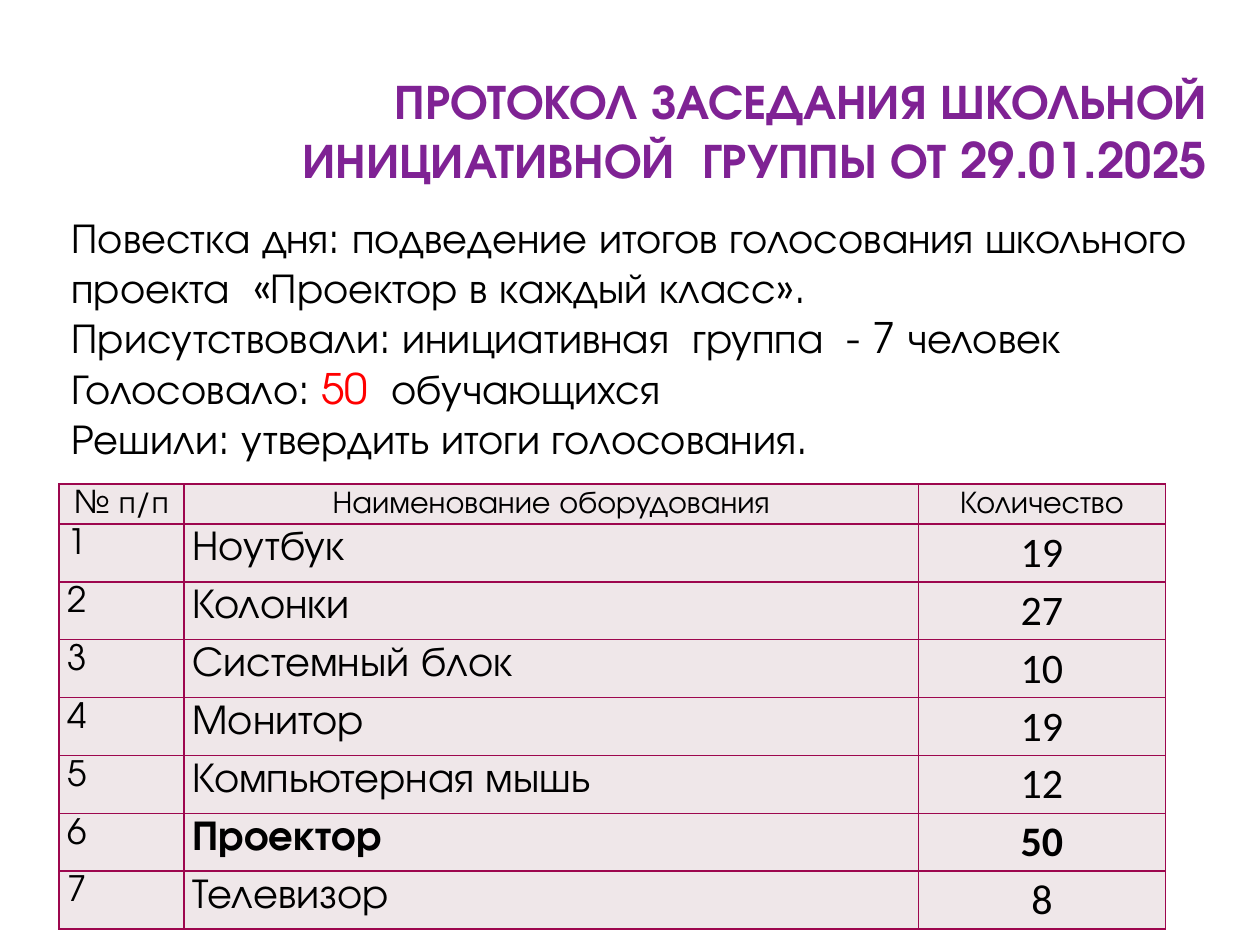
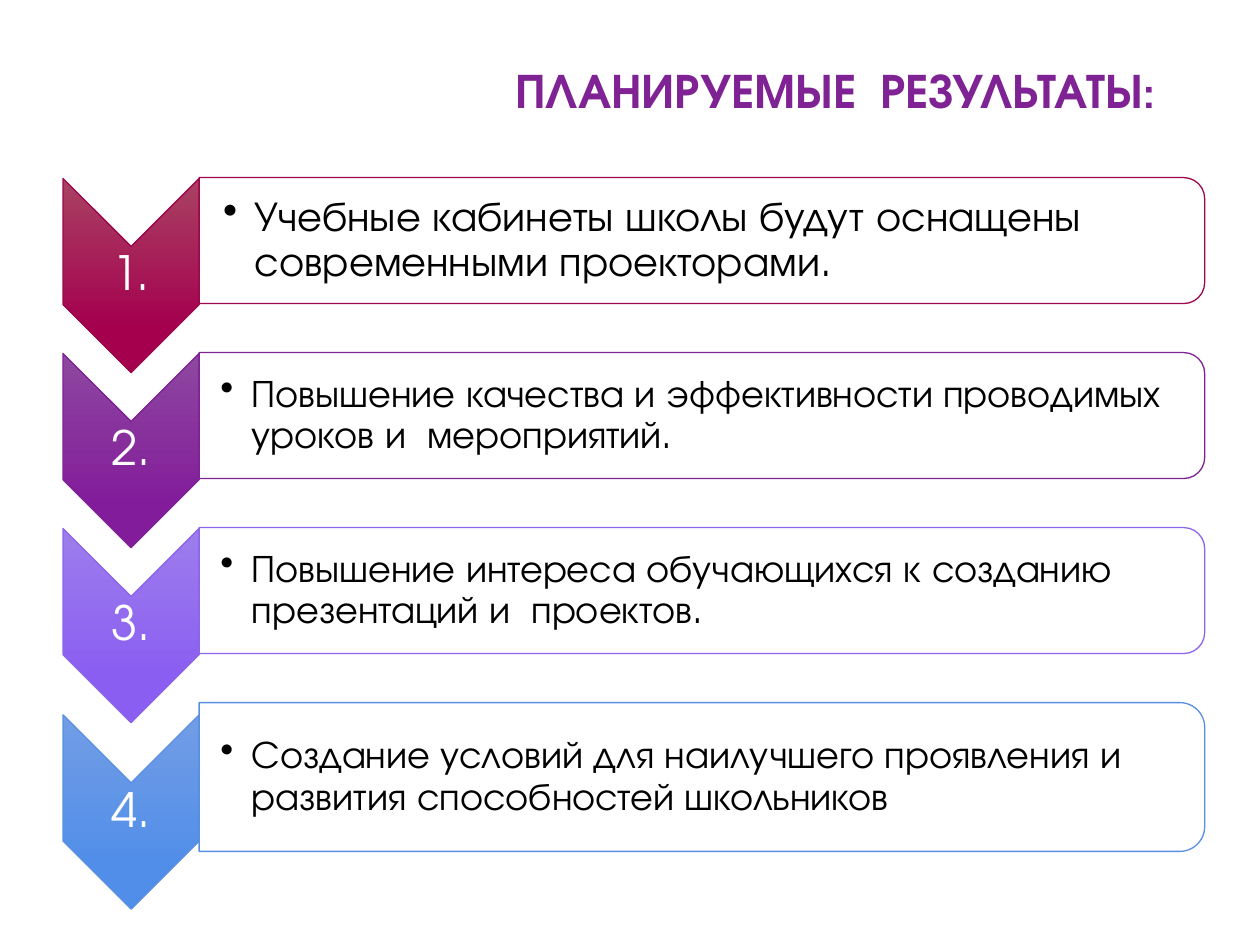
"""Build two slides: the minutes of a school vote and its planned results."""
from dataclasses import dataclass
from typing import Any

from lxml.etree import SubElement
from pptx import Presentation
from pptx.dml.color import RGBColor
from pptx.enum.shapes import MSO_SHAPE
from pptx.enum.text import MSO_ANCHOR, MSO_AUTO_SIZE, PP_ALIGN
from pptx.oxml.ns import qn
from pptx.util import Pt

FONT = "TeX Gyre Adventor"
NUMBER_FONT = "Calibri"
PURPLE, CRIMSON, BLACK, WHITE, RED = "7F2294", "9D074E", "000000", "FFFFFF", "FF0000"
CELL_FILL = "EFE7E9"


@dataclass(frozen=True)
class Span:
    text: str
    size: float = 24
    color: str = BLACK
    bold: bool = False
    font: str = FONT


@dataclass(frozen=True)
class Box:
    left: float
    top: float
    width: float
    height: float


@dataclass(frozen=True)
class Equipment:
    name: str
    votes: int
    winner: bool = False


@dataclass(frozen=True)
class Result:
    text: str
    light: str
    dark: str
    line: str
    size: float = 22
    inset: float = 12.2
    height: float = 72


AGENDA = [
    [Span("Повестка дня: подведение итогов голосования школьного проекта  «Проектор в каждый класс».")],
    [Span("Присутствовали: инициативная  группа  - 7 человек")],
    [Span("Голосовало: "), Span("50  ", color=RED), Span("обучающихся")],
    [Span("Решили: утвердить итоги голосования.")],
]
HEADERS = ["№ п/п", "Наименование оборудования", "Количество"]
COLUMN_WIDTHS = [71.3, 419.8, 141.1]
HEADER_HEIGHT, ROW_HEIGHT = 22.9, 33.1
EQUIPMENT = [
    Equipment("Ноутбук", 19),
    Equipment("Колонки", 27),
    Equipment("Системный блок", 10),
    Equipment("Монитор", 19),
    Equipment("Компьютерная мышь", 12),
    Equipment("Проектор", 50, winner=True),
    Equipment("Телевизор", 8),
]
RESULTS = [
    Result("Учебные кабинеты школы будут оснащены современными проекторами.",
           "A94263", "A4004E", CRIMSON, size=24, inset=13.7),
    Result("Повышение качества и эффективности проводимых уроков и  мероприятий.",
           "8D48A0", "831C9A", PURPLE),
    Result("Повышение интереса обучающихся к созданию презентаций и  проектов.",
           "9D7DED", "8A5EF1", "8D65EA"),
    Result("Создание условий для наилучшего проявления и развития способностей школьников",
           "729DE5", "518EE9", "588FE2", height=85),
]
RESULTS_TOP, RESULTS_GAP, CHEVRON_DROP = 101.5, 28, 20
CHEVRON_LEFT, CHEVRON_WIDTH, CHEVRON_HEIGHT = 36, 77.8, 111
PANEL_LEFT, PANEL_WIDTH = 113.8, 574.6


def rgb(color: str) -> RGBColor:
    return RGBColor.from_string(color)


def apply(target: Any, **values: Any) -> None:
    for name, value in values.items():
        setattr(target, name, value)


def place(shape: Any, box: Box) -> None:
    apply(shape, left=Pt(box.left), top=Pt(box.top), width=Pt(box.width), height=Pt(box.height))


def write(paragraph: Any, spans: list[Span], **formats: Any) -> None:
    apply(paragraph, **formats)
    for span in spans:
        run = paragraph.add_run()
        run.text = span.text
        apply(run.font, name=span.font, size=Pt(span.size), bold=span.bold)
        run.font.color.rgb = rgb(span.color)


def write_lines(shape: Any, box: Box, lines: list[list[Span]], wrap: bool = True, **formats: Any) -> None:
    place(shape, box)
    frame = shape.text_frame
    apply(frame, word_wrap=wrap, auto_size=MSO_AUTO_SIZE.NONE, vertical_anchor=MSO_ANCHOR.TOP)
    for index, spans in enumerate(lines):
        paragraph = frame.add_paragraph() if index else frame.paragraphs[0]
        write(paragraph, spans, space_before=Pt(0), **formats)


def add_title(slide: Any, box: Box, lines: list[list[tuple[str, float]]], **formats: Any) -> None:
    spans = [[Span(text, size, PURPLE, True) for text, size in line] for line in lines]
    write_lines(slide.shapes.title, box, spans, **formats)


def set_bullet(paragraph: Any, indent: float, character: str = "") -> None:
    properties = paragraph._p.get_or_add_pPr()
    properties.set("marL", str(Pt(indent)))
    properties.set("indent", str(-Pt(indent)))
    if character:
        SubElement(properties, qn("a:buChar")).set("char", character)
    else:
        SubElement(properties, qn("a:buNone"))


def draw_cell(cell: Any, span: Span, alignment: Any, spacing: float, anchor: Any = MSO_ANCHOR.TOP) -> None:
    apply(cell, margin_left=Pt(5), margin_right=Pt(5), margin_top=0, margin_bottom=0, vertical_anchor=anchor)
    for side in ("a:lnL", "a:lnR", "a:lnT", "a:lnB"):
        border = SubElement(cell._tc.get_or_add_tcPr(), qn(side))
        border.set("w", str(Pt(1)))
        SubElement(SubElement(border, qn("a:solidFill")), qn("a:srgbClr")).set("val", CRIMSON)
    cell.fill.solid()
    cell.fill.fore_color.rgb = rgb(CELL_FILL)
    write(cell.text_frame.paragraphs[0], [span], alignment=alignment, line_spacing=spacing)


def add_vote_table(slide: Any) -> None:
    frame = slide.shapes.add_table(
        len(EQUIPMENT) + 1, len(HEADERS), Pt(33.8), Pt(276.5), Pt(sum(COLUMN_WIDTHS)),
        Pt(HEADER_HEIGHT + ROW_HEIGHT * len(EQUIPMENT)))
    table = frame.table
    apply(table, first_row=False, horz_banding=False)
    for column, width in zip(table.columns, COLUMN_WIDTHS):
        column.width = Pt(width)
    for index, row in enumerate(table.rows):
        row.height = Pt(ROW_HEIGHT if index else HEADER_HEIGHT)
    for column, header in enumerate(HEADERS):
        draw_cell(table.cell(0, column), Span(header, 18), PP_ALIGN.CENTER, 1.07, MSO_ANCHOR.MIDDLE)
    for row, item in enumerate(EQUIPMENT, 1):
        draw_cell(table.cell(row, 0), Span(str(row), 20), PP_ALIGN.LEFT, 1.15)
        draw_cell(table.cell(row, 1), Span(item.name, bold=item.winner), PP_ALIGN.LEFT, 1.15)
        votes = Span(str(item.votes), bold=item.winner, font=NUMBER_FONT)
        draw_cell(table.cell(row, 2), votes, PP_ALIGN.CENTER, 1.07)


def add_turned_shape(slide: Any, kind: Any, box: Box, line: str) -> Any:
    middle_x, middle_y = box.left + box.width / 2, box.top + box.height / 2
    shape = slide.shapes.add_shape(
        kind, Pt(middle_x - box.height / 2), Pt(middle_y - box.width / 2), Pt(box.height), Pt(box.width))
    shape.rotation = 90
    shape.shadow.inherit = False
    shape.line.color.rgb = rgb(line)
    shape.line.width = Pt(0.75)
    return shape


def add_label(slide: Any, box: Box, span: Span, inset: float = 1.4, bullet: str = "") -> None:
    label = slide.shapes.add_textbox(0, 0, 0, 0)
    place(label, box)
    frame = label.text_frame
    apply(frame, word_wrap=True, vertical_anchor=MSO_ANCHOR.MIDDLE, margin_left=Pt(inset),
          margin_right=Pt(1.4), margin_top=Pt(1.4), margin_bottom=Pt(1.4))
    paragraph = frame.paragraphs[0]
    if bullet:
        set_bullet(paragraph, 18, bullet)
    write(paragraph, [span], line_spacing=0.9, alignment=PP_ALIGN.LEFT if bullet else PP_ALIGN.CENTER)


def add_result(slide: Any, number: int, top: float, result: Result) -> None:
    middle = top + result.height / 2
    chevron_middle = middle + CHEVRON_DROP
    chevron_box = Box(CHEVRON_LEFT, chevron_middle - CHEVRON_HEIGHT / 2, CHEVRON_WIDTH, CHEVRON_HEIGHT)
    chevron = add_turned_shape(slide, MSO_SHAPE.CHEVRON, chevron_box, result.line)
    chevron.fill.gradient()
    chevron.fill.gradient_angle = 270
    for stop, color, position in zip(chevron.fill.gradient_stops, (result.light, result.dark), (0, 0.78)):
        stop.color.rgb = rgb(color)
        stop.position = position
    chevron._element.spPr.find(qn("a:gradFill")).set("rotWithShape", "0")
    add_label(slide, Box(CHEVRON_LEFT, chevron_middle - 16.5, CHEVRON_WIDTH, 33), Span(f"{number}.", 27, WHITE))

    panel_box = Box(PANEL_LEFT, top, PANEL_WIDTH, result.height)
    panel = add_turned_shape(slide, MSO_SHAPE.ROUND_2_SAME_RECTANGLE, panel_box, result.line)
    panel.fill.solid()
    panel.fill.fore_color.rgb = rgb(WHITE)
    text_height = result.height * 0.9
    text_box = Box(PANEL_LEFT, middle - text_height / 2, PANEL_WIDTH - 3.6, text_height)
    add_label(slide, text_box, Span(result.text, result.size), result.inset, "•")


def build_minutes(presentation: Any) -> None:
    slide = presentation.slides.add_slide(presentation.slide_layouts[1])
    add_title(slide, Box(33.8, 36.7, 663.2, 75),
              [[("ПРОТОКОЛ ЗАСЕДАНИЯ ШКОЛЬНОЙ", 28)], [("ИНИЦИАТИВНОЙ  ГРУППЫ ОТ 29.01.2025", 28)]],
              alignment=PP_ALIGN.RIGHT)
    body = slide.placeholders[1]
    write_lines(body, Box(33.8, 117, 686.2, 152), AGENDA)
    for paragraph in body.text_frame.paragraphs:
        set_bullet(paragraph, 0)
    add_vote_table(slide)


def build_results(presentation: Any) -> None:
    slide = presentation.slides.add_slide(presentation.slide_layouts[5])
    add_title(slide, Box(287.3, 30.2, 414, 41),
              [[("ПЛАНИРУЕМЫЕ", 28), ("  ", 24), ("РЕЗУЛЬТАТЫ", 28), (":", 24)]],
              wrap=False, alignment=PP_ALIGN.LEFT)
    top = RESULTS_TOP
    for number, result in enumerate(RESULTS, 1):
        add_result(slide, number, top, result)
        top += result.height + RESULTS_GAP


def main() -> None:
    presentation = Presentation()
    apply(presentation, slide_width=Pt(720), slide_height=Pt(540))
    build_minutes(presentation)
    build_results(presentation)
    presentation.save("out.pptx")


if __name__ == "__main__":
    main()
